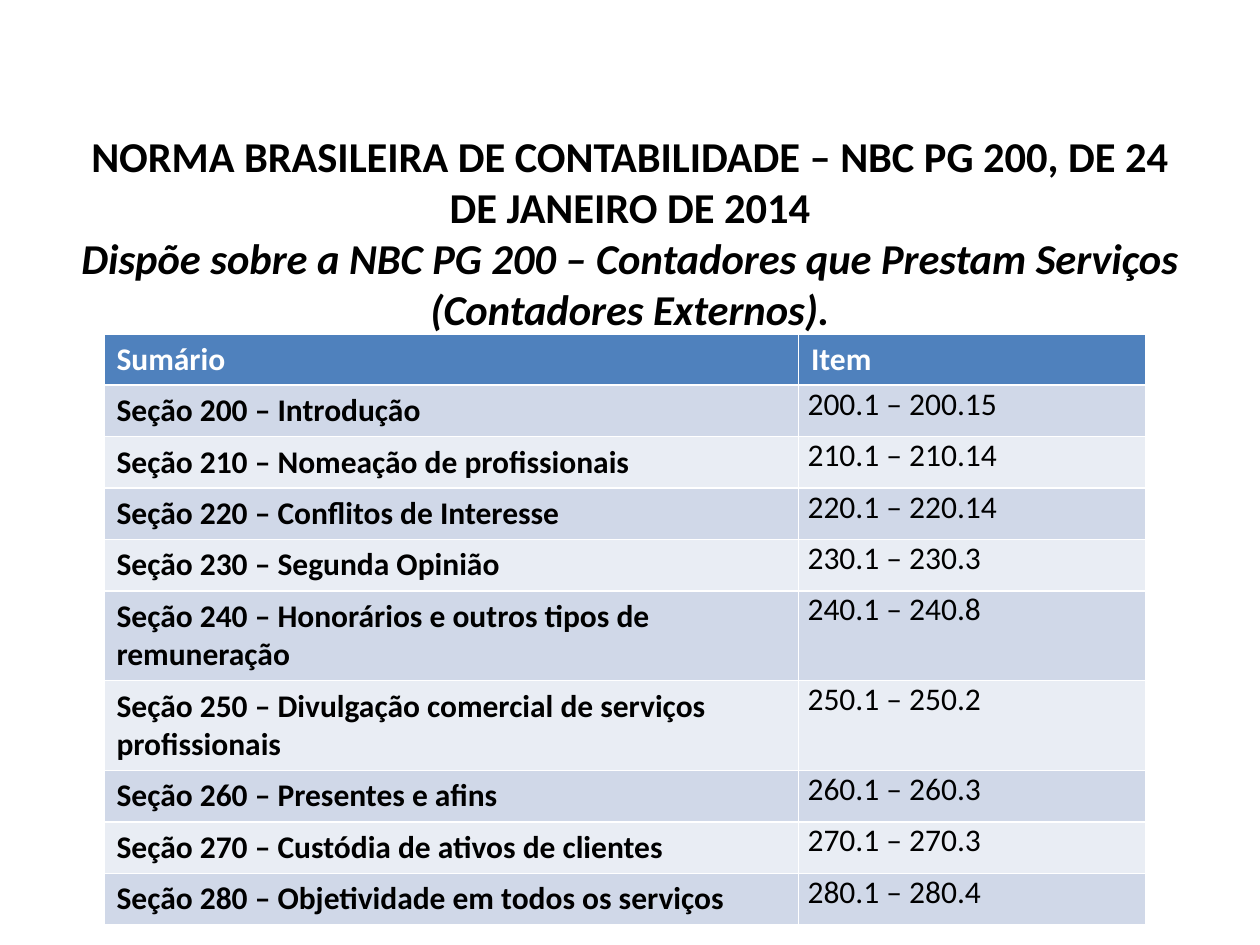
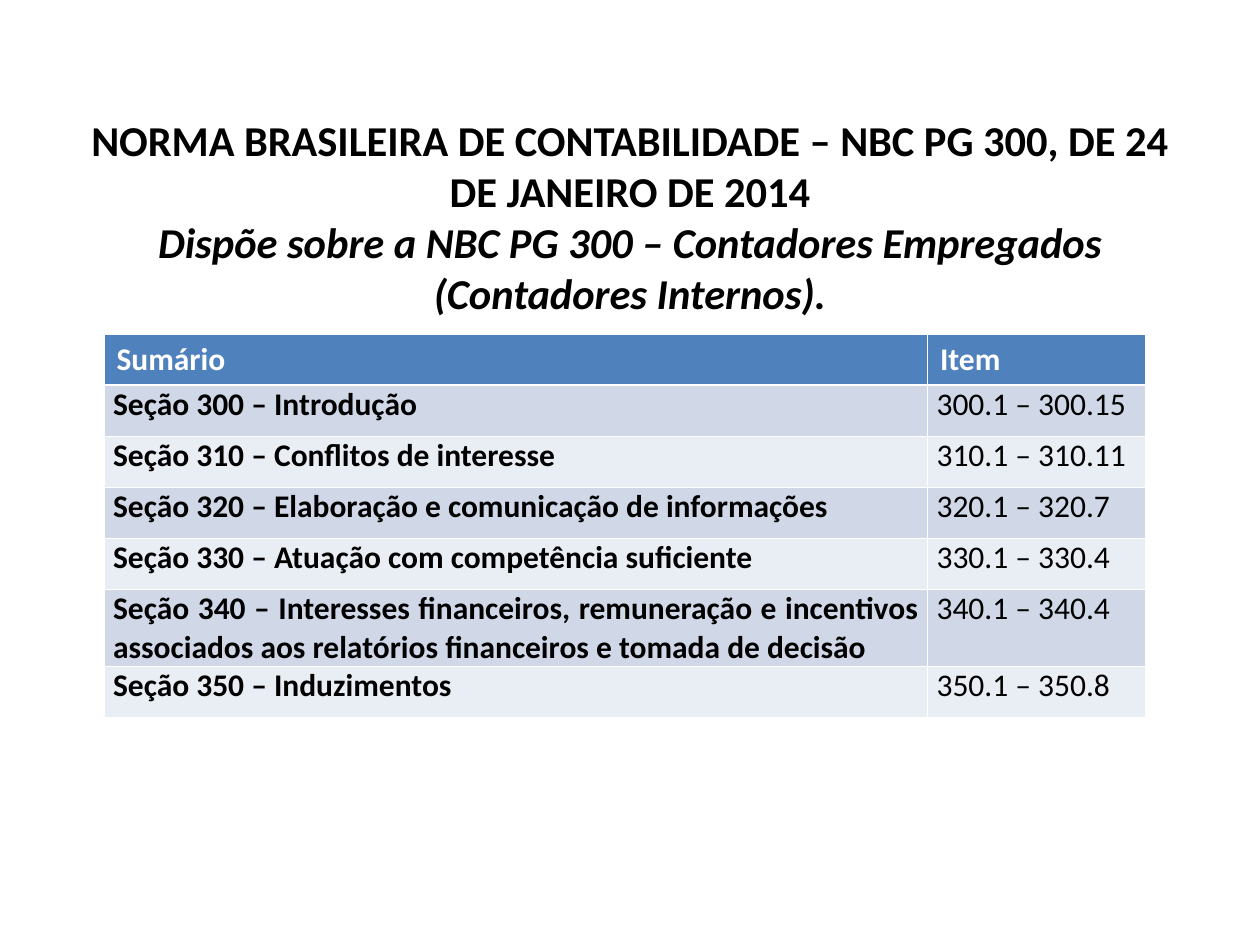
from pptx import Presentation as Deck
from pptx.dml.color import RGBColor as Rgb
from pptx.enum.text import MSO_ANCHOR as Anchor, MSO_AUTO_SIZE as Fit, PP_ALIGN as Align
from pptx.util import Cm, Pt

BLACK = Rgb(0x00, 0x00, 0x00)
WHITE = Rgb(0xFF, 0xFF, 0xFF)
BLUE = Rgb(0x4F, 0x81, 0xBD)
BANDS = Rgb(0xE9, 0xED, 0xF4), Rgb(0xD0, 0xD8, 0xE8)
FONT = "Calibri"
ROOMY = Cm(0.25), Cm(0.13)
TIGHT = Cm(0.18), Cm(0)

EXTERNAL = [
    ("Seção 200 – Introdução", "200.1 – 200.15"),
    ("Seção 210 – Nomeação de profissionais", "210.1 – 210.14"),
    ("Seção 220 – Conflitos de Interesse", "220.1 – 220.14"),
    ("Seção 230 – Segunda Opinião", "230.1 – 230.3"),
    ("Seção 240 – Honorários e outros tipos de remuneração", "240.1 – 240.8"),
    ("Seção 250 – Divulgação comercial de serviços profissionais", "250.1 – 250.2"),
    ("Seção 260 – Presentes e afins", "260.1 – 260.3"),
    ("Seção 270 – Custódia de ativos de clientes", "270.1 – 270.3"),
    ("Seção 280 – Objetividade em todos os serviços", "280.1 – 280.4"),
]
INTERNAL = [
    ("Seção 300 – Introdução", "300.1 – 300.15"),
    ("Seção 310 – Conflitos de interesse", "310.1 – 310.11"),
    ("Seção 320 – Elaboração e comunicação de informações", "320.1 – 320.7"),
    ("Seção 330 – Atuação com competência suficiente", "330.1 – 330.4"),
    ("Seção 340 – Interesses financeiros, remuneração e incentivos associados "
     "aos relatórios financeiros e tomada de decisão", "340.1 – 340.4"),
    ("Seção 350 – Induzimentos", "350.1 – 350.8"),
]


class Pen:
    def __init__(self):
        self.deck = Deck()
        self.deck.slide_width, self.deck.slide_height = Cm(25.4), Cm(19.05)
        self.slide = None

    def page(self):
        self.slide = self.deck.slides.add_slide(self.deck.slide_layouts[5])

    def style(self, para, size, color, bold=True, slant=False):
        for run in para.runs:
            font = run.font
            font.name, font.size = FONT, Pt(size)
            font.bold, font.italic = bold, slant
            font.color.rgb = color

    def title(self, top, norm, topic):
        box = self.slide.shapes.title
        box.left, box.top, box.width, box.height = Cm(1.27), Cm(top), Cm(22.86), Cm(4.1)
        frame = box.text_frame
        frame.word_wrap, frame.auto_size = True, Fit.NONE
        frame.vertical_anchor = Anchor.MIDDLE
        frame.margin_top = frame.margin_bottom = 0
        frame.text = norm
        frame.add_paragraph().text = topic
        for para, slant in zip(frame.paragraphs, (False, True)):
            para.alignment = Align.CENTER
            self.style(para, 24.3, BLACK, slant=slant)

    def cell(self, cell, text, fill, color, bold, inset):
        cell.fill.solid()
        cell.fill.fore_color.rgb = fill
        cell.margin_left = cell.margin_right = inset[0]
        cell.margin_top = cell.margin_bottom = inset[1]
        cell.text_frame.text = text
        para = cell.text_frame.paragraphs[0]
        para.alignment = Align.JUSTIFY if inset == TIGHT else Align.LEFT
        self.style(para, 18, color, bold)

    def table(self, items, widths, inset):
        count, high = len(items) + 1, Cm(1.03)
        table = self.slide.shapes.add_table(
            count, 2, Cm(2.1), Cm(6.73), Cm(sum(widths)), high * count).table
        for col, width in zip(table.columns, widths):
            col.width = Cm(width)
        for row in table.rows:
            row.height = high
        for col, text in enumerate(("Sumário", "Item")):
            self.cell(table.cell(0, col), text, BLUE, WHITE, True, ROOMY)
        for row, (name, item) in enumerate(items, 1):
            fill = BANDS[row % 2]
            self.cell(table.cell(row, 0), name, fill, BLACK, True, inset)
            self.cell(table.cell(row, 1), item, fill, BLACK, False, TIGHT)


def main():
    pen = Pen()
    pen.page()
    pen.title(2.62, "NORMA BRASILEIRA DE CONTABILIDADE – NBC PG 200, DE 24 DE JANEIRO DE 2014",
              "Dispõe sobre a NBC PG 200 – Contadores que Prestam Serviços (Contadores Externos).")
    pen.table(EXTERNAL, (14, 7), ROOMY)

    pen.page()
    pen.title(2.3, "NORMA BRASILEIRA DE CONTABILIDADE – NBC PG 300, DE 24 DE JANEIRO DE 2014",
              "Dispõe sobre a NBC PG 300 – Contadores Empregados (Contadores Internos).")
    pen.table(INTERNAL, (16.6, 4.4), TIGHT)
    pen.deck.save("out.pptx")


if __name__ == "__main__":
    main()
